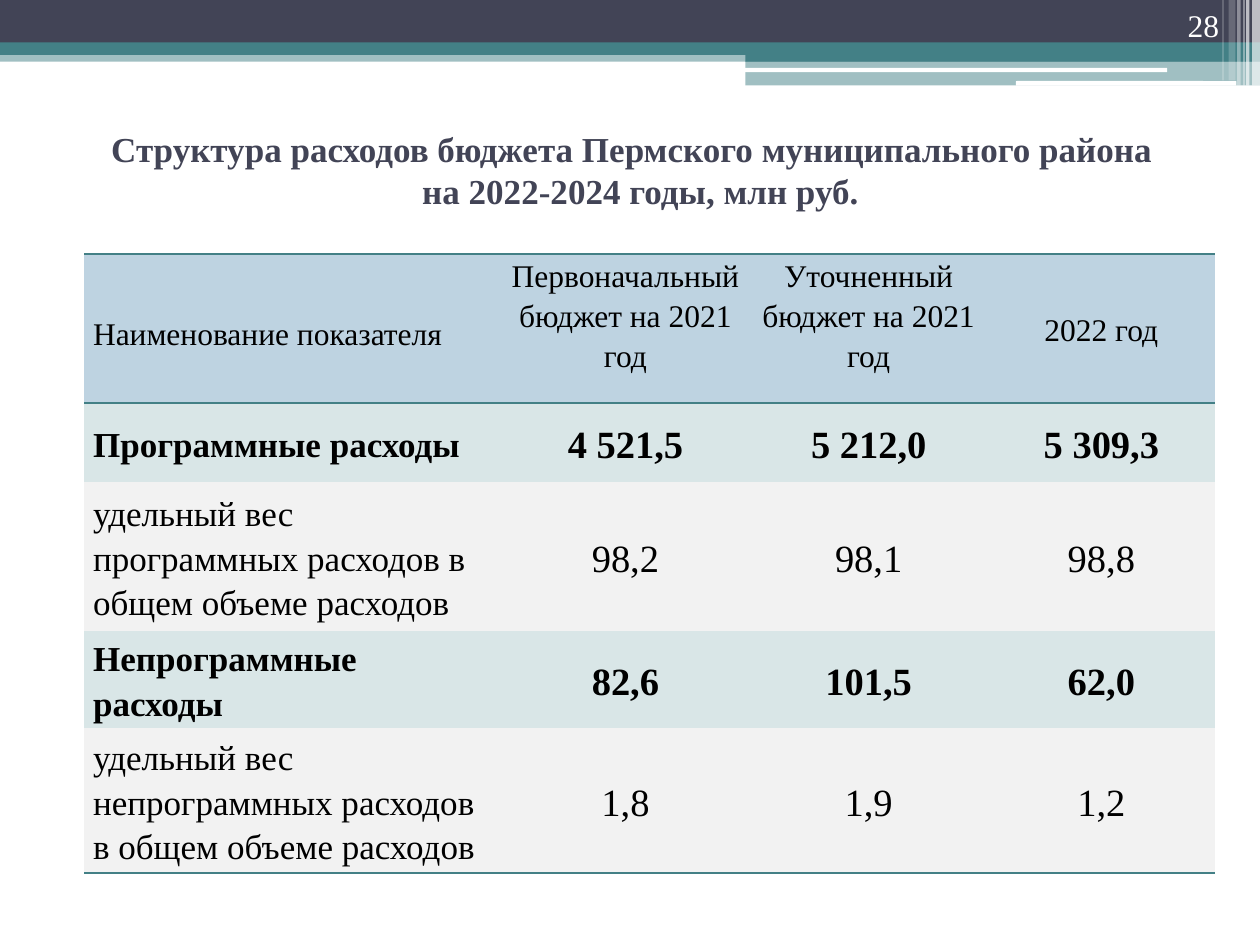
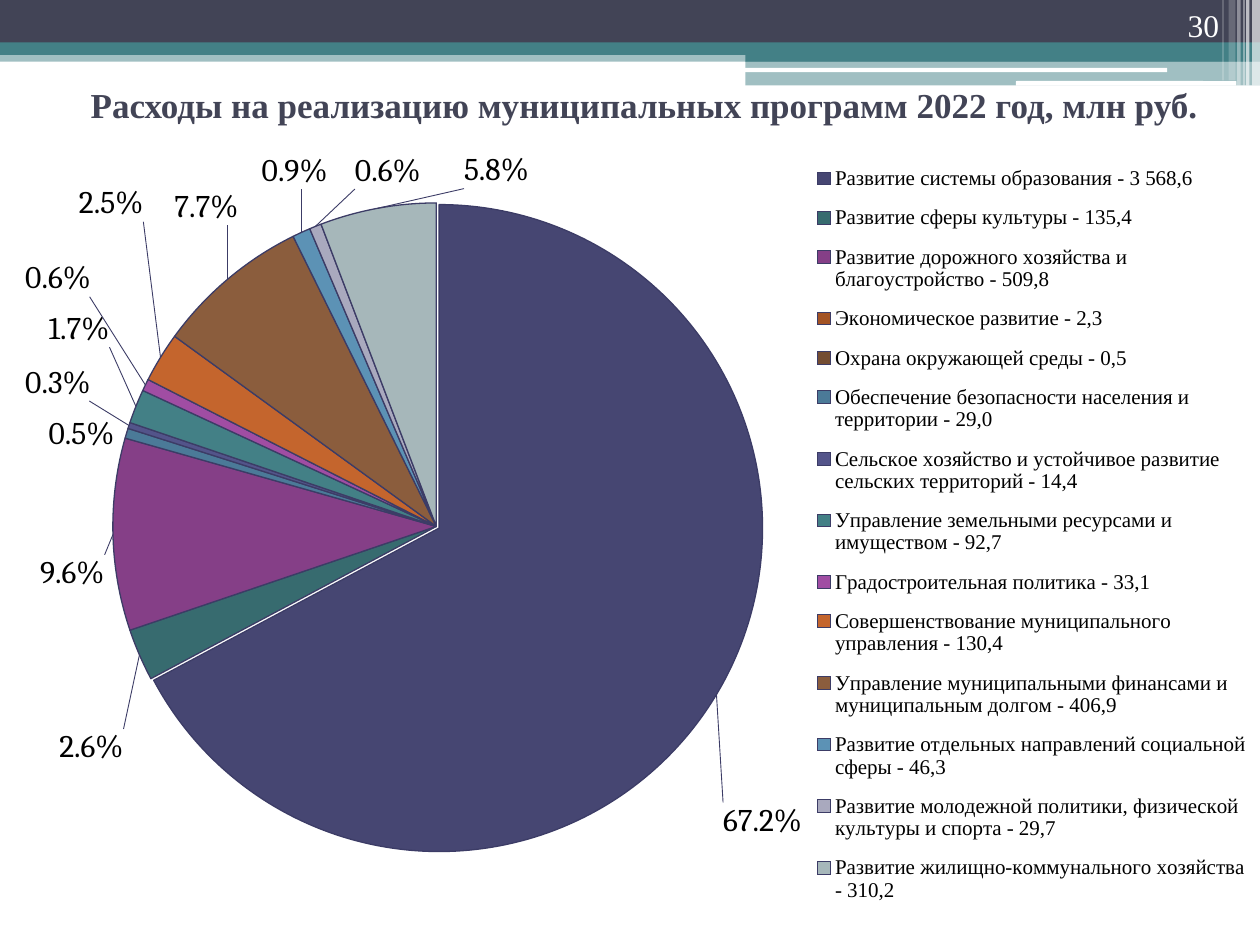
"""Build two budget slides: an expenditure table and a pie of municipal programmes."""
from dataclasses import dataclass
from itertools import accumulate
from math import cos, pi, sin

from lxml.etree import SubElement
from pptx import Presentation
from pptx.chart.data import CategoryChartData
from pptx.dml.color import RGBColor
from pptx.enum.chart import XL_CHART_TYPE, XL_LEGEND_POSITION
from pptx.enum.shapes import MSO_SHAPE
from pptx.enum.text import MSO_ANCHOR, PP_ALIGN
from pptx.oxml import parse_xml
from pptx.oxml.ns import nsdecls, qn
from pptx.util import Pt


@dataclass(frozen=True)
class Theme:
    ink: str = "424456"
    teal: str = "438086"
    white: str = "FFFFFF"
    black: str = "000000"
    header: str = "BED3E1"
    group: str = "D9E6E7"
    share: str = "F2F2F2"
    outline: str = "3C3C66"
    serif: str = "Times New Roman"
    chart_font: str = "Cambria"
    title_size: int = 20
    body_size: int = 18
    label_size: int = 20
    value_size: int = 22
    legend_size: int = 12


theme = Theme()


def write(frame, text, size, color, bold=False, align=PP_ALIGN.LEFT, anchor=MSO_ANCHOR.MIDDLE, spacing=1.0):
    frame.word_wrap = True
    frame.vertical_anchor = anchor
    frame.text = text
    for paragraph in frame.paragraphs:
        formats = {
            paragraph: {"alignment": align, "line_spacing": spacing},
            paragraph.font: {"size": Pt(size), "bold": bold, "name": theme.serif},
        }
        for target, values in formats.items():
            for name, value in values.items():
                setattr(target, name, value)
        paragraph.font.color.rgb = RGBColor.from_string(color)


def layout_xml(x, y, extra="", modes=""):
    return (f'<c:layout {nsdecls("c")}><c:manualLayout>{modes}<c:x val="{x:.4f}"/>'
            f'<c:y val="{y:.4f}"/>{extra}</c:manualLayout></c:layout>')


deck = Presentation()
deck.slide_width, deck.slide_height = Pt(720), Pt(540)

bands = [
    (0, 28.8, 720, 6.5, theme.teal, 50),
    (0, 0, 720, 24.5, theme.ink, 100),
    (0, 24.2, 720, 7.2, theme.teal, 100),
    (426, 28, 294, 7.2, theme.teal, 100),
    (426, 34.8, 294, 14, theme.teal, 50),
    (425.5, 38.8, 241.5, 2.4, theme.white, 100),
    (580.5, 46.3, 126, 2.7, theme.white, 100),
    (715.5, 0, 4.5, 49, theme.white, 65),
    (712, 0, 2, 49, theme.white, 65),
    (710.5, 0, 0.75, 49, theme.white, 60),
    (707, 0, 2, 49, theme.white, 40),
    (702, 0, 4, 46, theme.white, 20),
    (698.5, 0, 0.75, 46, theme.white, 30),
]
pages = [
    ("Структура расходов бюджета Пермского муниципального района\nна 2022-2024 годы, млн руб.",
     "28", (37, 60.2, 648, 73.5)),
    ("Расходы на реализацию муниципальных программ 2022 год, млн руб.",
     "30", (16.5, 31.7, 703.5, 55.5)),
]
slides = []
for title, number, title_place in pages:
    slide = deck.slides.add_slide(deck.slide_layouts[6])
    slides.append(slide)
    for *place, color, opacity in bands:
        outline = MSO_SHAPE.ROUNDED_RECTANGLE if 2 < place[3] < 3 else MSO_SHAPE.RECTANGLE
        band = slide.shapes.add_shape(outline, *map(Pt, place))
        band.shadow.inherit = False
        band.line.fill.background()
        band.fill.solid()
        band.fill.fore_color.rgb = RGBColor.from_string(color)
        if opacity < 100:
            tint = band.fill._xPr.find(qn("a:solidFill"))[0]
            SubElement(tint, qn("a:alpha"), val=str(opacity * 1000))
    heading = slide.shapes.add_textbox(*map(Pt, title_place))
    write(heading.text_frame, title, theme.title_size, theme.ink, True, PP_ALIGN.CENTER)
    for second_line in heading.text_frame.paragraphs[1:]:
        second_line._p.get_or_add_pPr().set("marL", str(Pt(10)))
    page_number = slide.shapes.add_textbox(Pt(643.7), Pt(0), Pt(60), Pt(28.8))
    write(page_number.text_frame, number, theme.body_size, theme.white,
          align=PP_ALIGN.RIGHT, anchor=MSO_ANCHOR.BOTTOM)
structure_slide, programmes_slide = slides

spending = [
    ("Наименование показателя", "Первоначальный бюджет на 2021 год", "Уточненный бюджет на 2021 год", "2022 год"),
    ("Программные расходы", "4 521,5", "5 212,0", "5 309,3"),
    ("удельный вес программных расходов в общем объеме расходов", "98,2", "98,1", "98,8"),
    ("Непрограммные расходы", "82,6", "101,5", "62,0"),
    ("удельный вес непрограммных расходов в общем объеме расходов", "1,8", "1,9", "1,2"),
]
column_widths = (238.2, 142, 136, 130)
row_heights = (85, 45.3, 85, 55.5, 82.7)
table_frame = structure_slide.shapes.add_table(
    len(spending), len(column_widths), Pt(48.2), Pt(145.2), Pt(sum(column_widths)), Pt(sum(row_heights)))
table = table_frame.table
table.first_row = table.horz_banding = False
table._tbl.tblPr.find(qn("a:tableStyleId")).text = "{2D5ABB26-0587-4C30-8999-92F81FD0307C}"
for column, width in zip(table.columns, column_widths):
    column.width = Pt(width)
for r, (row, height, entries) in enumerate(zip(table.rows, row_heights, spending)):
    row.height = Pt(height)
    is_group = r % 2 == 1
    fill = theme.header if r == 0 else theme.group if is_group else theme.share
    edges = {0: ("lnT", "lnB"), len(spending) - 1: ("lnB",)}.get(r, ())
    for c, (cell, entry) in enumerate(zip(row.cells, entries)):
        size = theme.body_size if r == 0 else theme.value_size if c else theme.label_size
        write(cell.text_frame, entry, size, theme.black, is_group,
              PP_ALIGN.CENTER if c else PP_ALIGN.LEFT, spacing=1.15)
        top_aligned = r == 0 and c in (1, 2)
        cell_format = {
            "margin_left": Pt(5), "margin_right": Pt(5), "margin_bottom": Pt(0),
            "margin_top": Pt(4.5 if r == c == 0 else 0),
            "vertical_anchor": MSO_ANCHOR.TOP if top_aligned else MSO_ANCHOR.MIDDLE,
        }
        for name, value in cell_format.items():
            setattr(cell, name, value)
        cell.fill.solid()
        cell.fill.fore_color.rgb = RGBColor.from_string(fill)
        for position, edge in enumerate(edges):
            cell._tc.tcPr.insert(position, parse_xml(
                f'<a:{edge} {nsdecls("a")} w="12700"><a:solidFill><a:srgbClr val="{theme.teal}"/>'
                f'</a:solidFill></a:{edge}>'))

programmes = [
    ("Развитие системы образования - 3 568,6", 67.2, "464672", (435.5, 468.5)),
    ("Развитие сферы культуры - 135,4", 2.6, "376B6F", (52, 428)),
    ("Развитие дорожного хозяйства и благоустройство - 509,8", 9.6, "853F87", (41.5, 327.5)),
    ("Экономическое развитие - 2,3", 0, "A35324", None),
    ("Охрана окружающей среды - 0,5", 0, "744D32", None),
    ("Обеспечение безопасности населения и территории - 29,0", 0.5, "4B7A98", (47, 247)),
    ("Сельское хозяйство и устойчивое развитие сельских территорий - 14,4", 0.3, "53548A", (32.5, 217.5)),
    ("Управление земельными ресурсами и имуществом - 92,7", 1.7, "438086", (44, 187)),
    ("Градостроительная политика - 33,1", 0.6, "A04DA3", (32.5, 158.5)),
    ("Совершенствование муниципального управления - 130,4", 2.5, "C4652D", (63, 116)),
    ("Управление муниципальными финансами и муниципальным долгом - 406,9", 7.7, "8B5D3D", (116.5, 119)),
    ("Развитие отдельных направлений социальной сферы - 46,3", 0.9, "5C92B5", (166.5, 99)),
    ("Развитие молодежной политики, физической культуры и спорта - 29,7", 0.6, "A9A9BE", (219.5, 99)),
    ("Развитие жилищно-коммунального хозяйства - 310,2", 5.8, "A6B7BA", (280.5, 99)),
]
names, shares, slice_colors, label_centres = zip(*programmes)
chart_data = CategoryChartData(number_format="0.0")
chart_data.categories = names
chart_data.add_series("Series 1", shares)
left, top, width, height = 14.4, 77, 705.6, 447.8
chart = programmes_slide.shapes.add_chart(
    XL_CHART_TYPE.PIE, Pt(left), Pt(top), Pt(width), Pt(height), chart_data).chart
chart.has_title = False
chart.has_legend = True
chart.legend.position = XL_LEGEND_POSITION.RIGHT
chart.legend.include_in_layout = False
for font, name, size in ((chart.font, theme.chart_font, theme.body_size),
                         (chart.legend.font, theme.serif, theme.legend_size)):
    font.name, font.size = name, Pt(size)
    font.color.rgb = RGBColor.from_string(theme.black)

pie = chart.plots[0]
pie.vary_by_categories = True
series = pie.series[0]
for index, color in enumerate(slice_colors):
    wedge = series.points[index].format
    wedge.fill.solid()
    wedge.fill.fore_color.rgb = RGBColor.from_string(color)
    wedge.line.color.rgb = RGBColor.from_string(theme.outline)
    wedge.line.width = Pt(0.75)
first_wedge = series._element.find(qn("c:dPt"))
first_wedge.find(qn("c:spPr")).addprevious(parse_xml(f'<c:explosion {nsdecls("c")} val="1"/>'))

plot_x, plot_y, plot_w, plot_h = 0.071, 0.087, 0.524, 0.826
radius = plot_w * width / 2
centre_x = left + plot_x * width + radius
centre_y = top + (plot_y + plot_h / 2) * height
percent_flags = "".join(
    f'<c:{flag} val="{int(flag == "showPercent")}"/>'
    for flag in ("showLegendKey", "showVal", "showCatName", "showSerName", "showPercent", "showBubbleSize"))
number_format = '<c:numFmt formatCode="0.0%" sourceLinked="0"/>'
labels = ""
for index, (share, end, target) in enumerate(zip(shares, accumulate(shares), label_centres)):
    if target is None:
        labels += f'<c:dLbl><c:idx val="{index}"/><c:delete val="1"/></c:dLbl>'
        continue
    angle = 2 * pi * (end - share / 2) / sum(shares)
    half_width = 27.5 if share > 10 else 22.5
    half_height = 0 if abs(cos(angle)) < 0.08 else 13
    default_x = centre_x + radius * sin(angle) + (half_width if sin(angle) > 0 else -half_width)
    default_y = centre_y - radius * cos(angle) + (half_height if cos(angle) < 0 else -half_height)
    offset = layout_xml((target[0] - default_x) / width, (target[1] - default_y) / height)
    labels += (f'<c:dLbl><c:idx val="{index}"/>{offset}{number_format}'
               f'<c:dLblPos val="bestFit"/>{percent_flags}</c:dLbl>')
series._element.find(qn("c:cat")).addprevious(parse_xml(
    f'<c:dLbls {nsdecls("c", "a")}>{labels}{number_format}{percent_flags}<c:showLeaderLines val="1"/>'
    f'<c:leaderLines><c:spPr><a:ln w="6350"><a:solidFill><a:srgbClr val="{theme.outline}"/>'
    '</a:solidFill></a:ln></c:spPr></c:leaderLines></c:dLbls>'))

edge_modes = '<c:xMode val="edge"/><c:yMode val="edge"/>'
plot_area = chart._chartSpace.chart.plotArea
for old_layout in plot_area.findall(qn("c:layout")):
    plot_area.remove(old_layout)
plot_area.insert(0, parse_xml(layout_xml(
    plot_x, plot_y, f'<c:w val="{plot_w}"/><c:h val="{plot_h}"/>',
    '<c:layoutTarget val="inner"/>' + edge_modes)))
legend = chart.legend._element
for old_layout in legend.findall(qn("c:layout")):
    legend.remove(old_layout)
legend.find(qn("c:legendPos")).addnext(parse_xml(layout_xml(
    0.65, 0.02, '<c:w val="0.35"/><c:h val="0.98"/>', edge_modes)))

deck.save("out.pptx")
